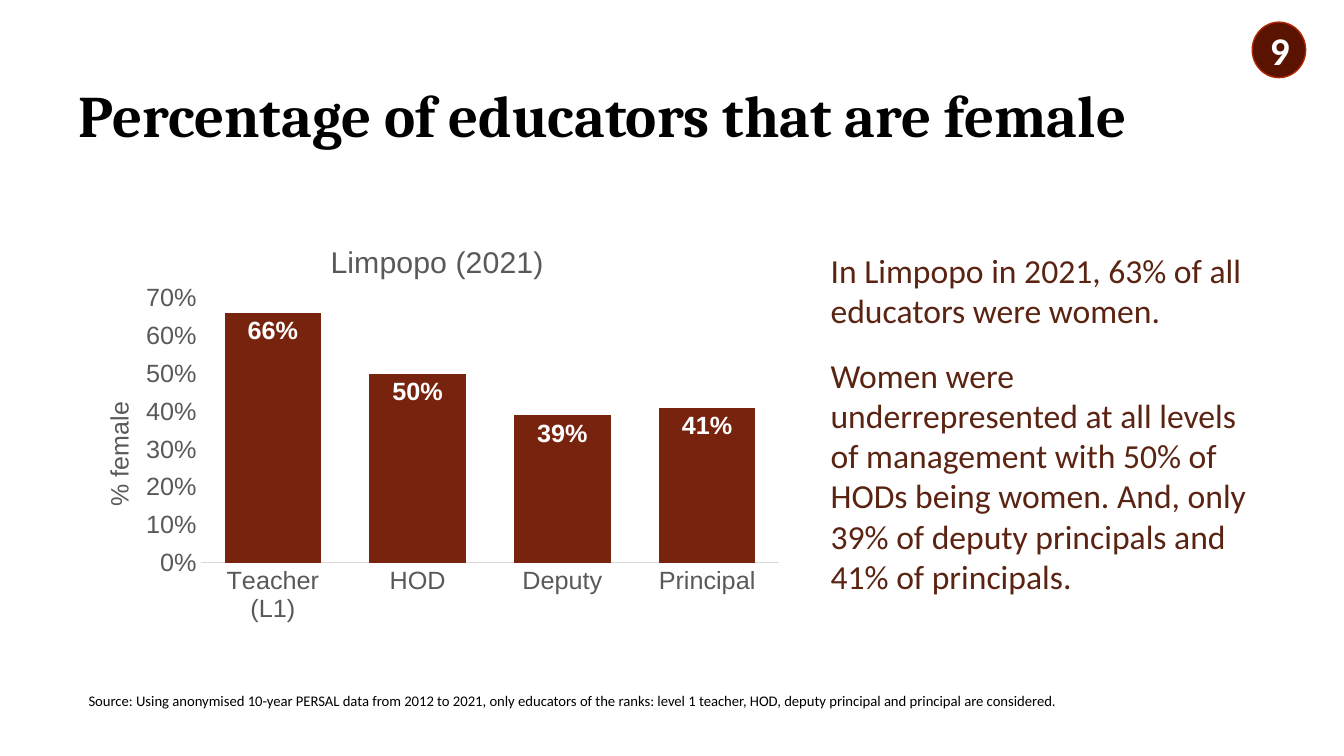
from dataclasses import dataclass

import pptx
import pptx.chart.data
import pptx.dml.color
import pptx.enum.chart
import pptx.enum.shapes
import pptx.enum.text
import pptx.oxml
import pptx.oxml.ns
import pptx.util
from pptx.util import Inches

ALIGN = pptx.enum.text.PP_ALIGN
ANCHOR = pptx.enum.text.MSO_ANCHOR


@dataclass(frozen=True)
class Theme:
    heading_font: str = "Cambria"
    body_font: str = "Calibri"
    chart_font: str = "Arial"
    white: str = "FFFFFF"
    black: str = "000000"
    badge: str = "591300"
    badge_line: str = "B22600"
    body: str = "5B2412"
    bar: str = "78230D"
    axis: str = "595959"
    axis_line: str = "D9D9D9"
    title_size: float = 42
    badge_size: float = 28
    body_size: float = 24
    source_size: float = 10.5
    chart_title_size: float = 21.6
    chart_size: float = 18


THEME = Theme()


def rgb(color):
    return pptx.dml.color.RGBColor.from_string(color)


def fill_solid(fill, color):
    fill.solid()
    fill.fore_color.rgb = rgb(color)


def style_font(font, name, size, color, bold=False):
    font.name = name
    font.size = pptx.util.Pt(size)
    font.color.rgb = rgb(color)
    font.bold = bold


def write(tf, paragraphs, *font_style, align=ALIGN.LEFT, gap=0):
    """Fill a text frame, with gap points between paragraphs."""
    tf.word_wrap = True
    for i, text in enumerate(paragraphs):
        p = tf.add_paragraph() if i else tf.paragraphs[0]
        p.alignment = align
        p.space_before = pptx.util.Pt(gap if i else 0)
        r = p.add_run()
        r.text = text
        style_font(r.font, *font_style)


def add_title(s, text):
    sp = s.shapes.title
    sp.left, sp.top, sp.width, sp.height = map(Inches, (0.68, 0.45, 11.5, 1.45))
    fill_solid(sp.fill, THEME.white)
    tf = sp.text_frame
    tf.vertical_anchor = ANCHOR.MIDDLE
    write(tf, [text], THEME.heading_font, THEME.title_size, THEME.black, True)
    tf.paragraphs[0].line_spacing = 0.9


def add_badge(s, text):
    sp = s.shapes.add_shape(pptx.enum.shapes.MSO_SHAPE.OVAL,
                            Inches(12.42), Inches(0.22), Inches(0.53), Inches(0.55))
    sp.shadow.inherit = False
    fill_solid(sp.fill, THEME.badge)
    sp.line.color.rgb = rgb(THEME.badge_line)
    sp.line.width = pptx.util.Pt(1)
    sp.text_frame.vertical_anchor = ANCHOR.MIDDLE
    write(sp.text_frame, [text], THEME.body_font, THEME.badge_size, THEME.white, True,
          align=ALIGN.CENTER)


def add_text(s, box, paragraphs, size, color, inset=0.05, gap=0):
    sp = s.shapes.add_textbox(*map(Inches, box))
    tf = sp.text_frame
    tf.margin_top = tf.margin_bottom = Inches(inset)
    tf.auto_size = pptx.enum.text.MSO_AUTO_SIZE.SHAPE_TO_FIT_TEXT
    write(tf, paragraphs, THEME.body_font, size, color, gap=gap)


def layout_xml(x, y, w=None, h=None):
    """Build a manual chart layout from fractions of the chart's size."""
    values = [("xMode", "edge"), ("yMode", "edge"), ("x", x), ("y", y)]
    if w:
        values.insert(0, ("layoutTarget", "inner"))
        values += [("w", w), ("h", h)]
    items = "".join(f'<c:{tag} val="{val}"/>' for tag, val in values)
    return pptx.oxml.parse_xml(
        f'<c:layout {pptx.oxml.ns.nsdecls("c")}><c:manualLayout>{items}'
        "</c:manualLayout></c:layout>")


def set_layout(element, *fractions):
    for old in element.findall(pptx.oxml.ns.qn("c:layout")):
        element.remove(old)
    tx = element.find(pptx.oxml.ns.qn("c:tx"))
    if tx is None:
        element.insert(0, layout_xml(*fractions))
    else:
        tx.addnext(layout_xml(*fractions))


def title_chart_part(title, text, size, x, y):
    write(title.text_frame, [text], THEME.chart_font, size, THEME.axis, align=ALIGN.CENTER)
    set_layout(title._element, x, y)


def style_axis(axis):
    axis.major_tick_mark = axis.minor_tick_mark = pptx.enum.chart.XL_TICK_MARK.NONE
    axis.has_major_gridlines = False
    style_font(axis.tick_labels.font, THEME.chart_font, THEME.chart_size, THEME.axis)


def add_column_chart(s, title, axis_title, shares):
    data = pptx.chart.data.CategoryChartData(number_format="0%")
    data.categories = list(shares)
    data.add_series("Series 1", list(shares.values()))
    chart = s.shapes.add_chart(pptx.enum.chart.XL_CHART_TYPE.COLUMN_CLUSTERED,
                               Inches(0.68), Inches(2.16), Inches(7.27), Inches(4.02),
                               data).chart
    style_font(chart.font, THEME.chart_font, THEME.chart_size, THEME.black)
    chart.has_legend = False
    chart.has_title = True
    title_chart_part(chart.chart_title, title, THEME.chart_title_size, 0.35, 0.05)
    set_layout(chart._chartSpace.chart.plotArea, 0.18, 0.2, 0.79, 0.66)

    style_axis(chart.category_axis)
    chart.category_axis.format.line.color.rgb = rgb(THEME.axis_line)
    chart.category_axis.format.line.width = pptx.util.Pt(0.75)

    values = chart.value_axis
    style_axis(values)
    values.format.line.fill.background()
    values.minimum_scale, values.maximum_scale, values.major_unit = 0, 0.7, 0.1
    values.tick_labels.number_format = "0%"
    values.tick_labels.number_format_is_linked = False
    values.has_title = True
    title_chart_part(values.axis_title, axis_title, THEME.chart_size, 0.04, 0.45)

    plot = chart.plots[0]
    plot.gap_width, plot.overlap, plot.vary_by_categories = 50, -27, False
    fill_solid(plot.series[0].format.fill, THEME.bar)
    plot.has_data_labels = True
    labels = plot.data_labels
    labels.show_value = True
    labels.position = pptx.enum.chart.XL_LABEL_POSITION.INSIDE_END
    labels.number_format = "0%"
    labels.number_format_is_linked = False
    style_font(labels.font, THEME.chart_font, THEME.chart_size, THEME.white, True)


def main():
    prs = pptx.Presentation()
    prs.slide_width, prs.slide_height = Inches(13.33), Inches(7.5)
    s = prs.slides.add_slide(prs.slide_layouts.get_by_name("Title Only"))
    add_title(s, "Percentage of educators that are female")
    add_badge(s, "9")
    add_text(s, (8.14, 2.38, 4.54, 3.67), [
        "In Limpopo in 2021, 63% of all educators were women.",
        "Women were underrepresented at all levels of management with 50% of HODs "
        "being women. And, only 39% of deputy principals and 41% of principals.",
    ], THEME.body_size, THEME.body, inset=0.1, gap=17)
    add_text(s, (0.78, 6.81, 11.76, 0.28), [
        "Source: Using anonymised 10-year PERSAL data from 2012 to 2021, only educators "
        "of the ranks: level 1 teacher, HOD, deputy principal and principal are considered.",
    ], THEME.source_size, THEME.black)
    add_column_chart(s, "Limpopo (2021)", "% female", {
        "Teacher (L1)": 0.66, "HOD": 0.5, "Deputy": 0.39, "Principal": 0.41})
    prs.save("out.pptx")


if __name__ == "__main__":
    main()
